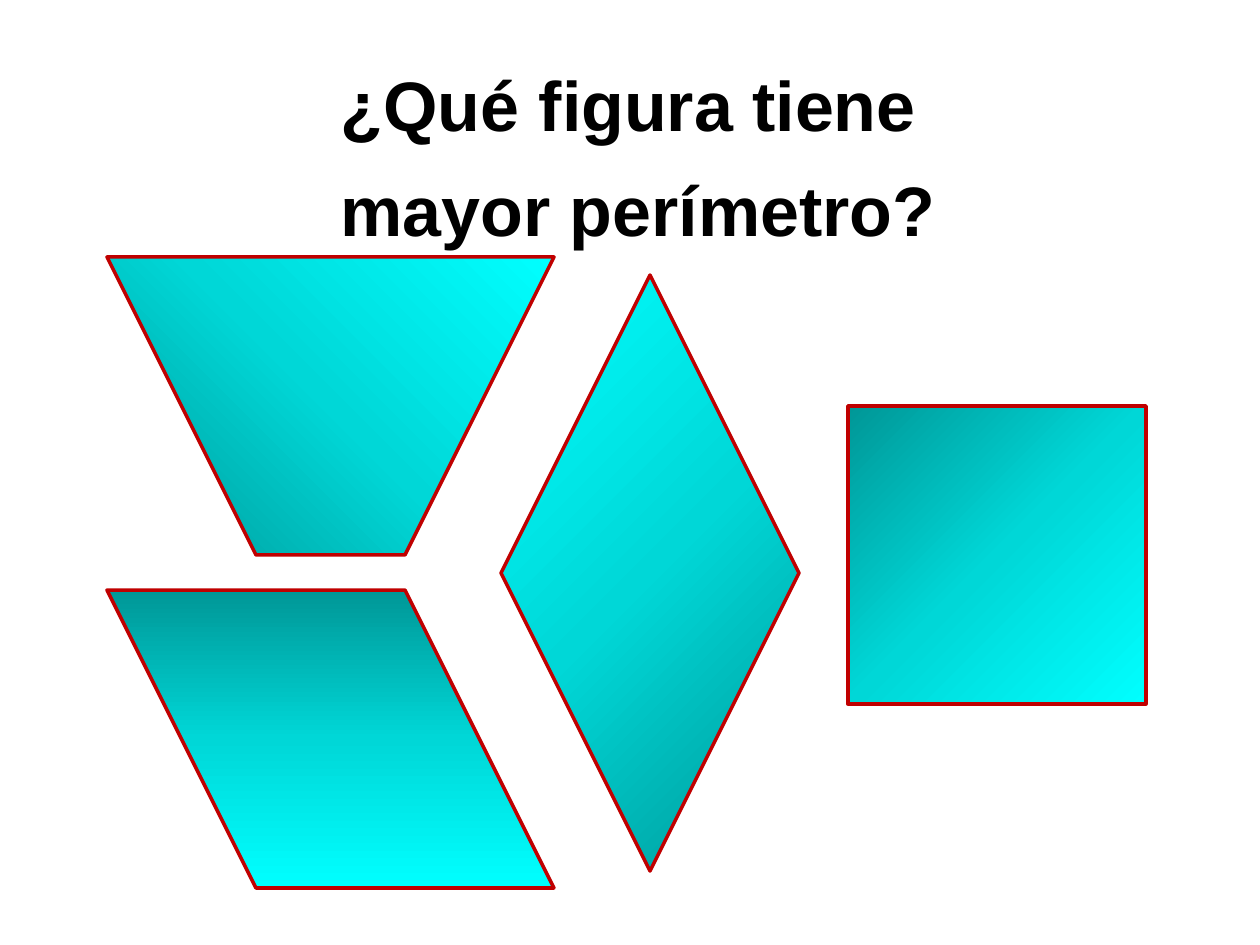
from pptx import Presentation
from pptx.dml.color import RGBColor
from pptx.enum.shapes import MSO_SHAPE
from pptx.enum.text import MSO_ANCHOR, MSO_AUTO_SIZE, PP_ALIGN
from pptx.oxml import parse_xml
from pptx.oxml.ns import nsdecls, qn
from pptx.util import Emu, Pt

PX_PER_INCH = 126
SLIDE_SIZE = (1260, 945)
TITLE_BOX = (71, 67, 1134, 157)
FIGURES_BOX = (107, 257, 1039, 630)
UNIT = 149  # every figure measures whole multiples of this length

BLACK = RGBColor(0x00, 0x00, 0x00)
RED = RGBColor(0xC0, 0x00, 0x00)
GRADIENT = (
    (0, RGBColor(0x00, 0x97, 0x97)),
    (50, RGBColor(0x00, 0xD7, 0xD7)),
    (100, RGBColor(0x00, 0xFF, 0xFF)),
)
CORNER_SHADE = '<a:path path="circle"><a:fillToRect r="100000" b="100000"/></a:path>'

TRAPEZOID = MSO_SHAPE.TRAPEZOID
DIAMOND = MSO_SHAPE.DIAMOND
SQUARE = MSO_SHAPE.RECTANGLE
PARALLELOGRAM = MSO_SHAPE.PARALLELOGRAM


def px(length):
    return Emu(round(length * 914400 / PX_PER_INCH))


def linear_shade(degrees):
    return f'<a:lin ang="{degrees * 60000}" scaled="1"/>'


# kind, offset in the box, size in units, shade, flip, adjustment
FIGURES = (
    (TRAPEZOID, (0, 0), (3, 2), linear_shade(45), "flipV", 0.5),
    (DIAMOND, (394, 18), (2, 4), linear_shade(225), None, None),
    (SQUARE, (741, 149), (2, 2), CORNER_SHADE, None, None),
    (PARALLELOGRAM, (0, 333), (3, 2), linear_shade(90), "flipH", 0.5),
)


def fill_gradient(shape, shade):
    stops = "".join(
        f'<a:gs pos="{position * 1000}"><a:srgbClr val="{color}"/></a:gs>'
        for position, color in GRADIENT
    )
    shape.fill.gradient()
    properties = shape._element.spPr
    properties.replace(
        properties.find(qn("a:gradFill")),
        parse_xml(
            f'<a:gradFill rotWithShape="1" {nsdecls("a")}>'
            f"<a:gsLst>{stops}</a:gsLst>{shade}</a:gradFill>"
        ),
    )


def add_figures(slide, box):
    left, top = box[:2]
    for kind, (x, y), (columns, rows), shade, flip, adjustment in FIGURES:
        shape = slide.shapes.add_shape(
            kind, px(left + x), px(top + y), px(columns * UNIT), px(rows * UNIT)
        )
        shape.shadow.inherit = False
        if adjustment is not None:
            shape.adjustments[0] = adjustment
        if flip:
            shape._element.spPr.xfrm.set(flip, "1")
        fill_gradient(shape, shade)
        shape.line.color.rgb = RED
        shape.line.width = Pt(2)


def add_title(slide, box):
    title = slide.shapes.title
    title.left, title.top, title.width, title.height = map(px, box)
    frame = title.text_frame
    frame.text = "¿Qué figura tiene \vmayor perímetro?"
    paragraph = frame.paragraphs[0]
    paragraph.font.color.rgb = BLACK
    formats = (
        (frame, {"word_wrap": True, "auto_size": MSO_AUTO_SIZE.NONE,
                 "vertical_anchor": MSO_ANCHOR.MIDDLE}),
        (paragraph, {"alignment": PP_ALIGN.CENTER, "line_spacing": 1.25}),
        (paragraph.font, {"name": "Arial", "size": Pt(40), "bold": True}),
    )
    for target, values in formats:
        for name, value in values.items():
            setattr(target, name, value)


def main():
    presentation = Presentation()
    presentation.slide_width, presentation.slide_height = map(px, SLIDE_SIZE)
    slide = presentation.slides.add_slide(presentation.slide_layouts[5])
    add_figures(slide, FIGURES_BOX)
    add_title(slide, TITLE_BOX)
    presentation.save("out.pptx")


if __name__ == "__main__":
    main()
